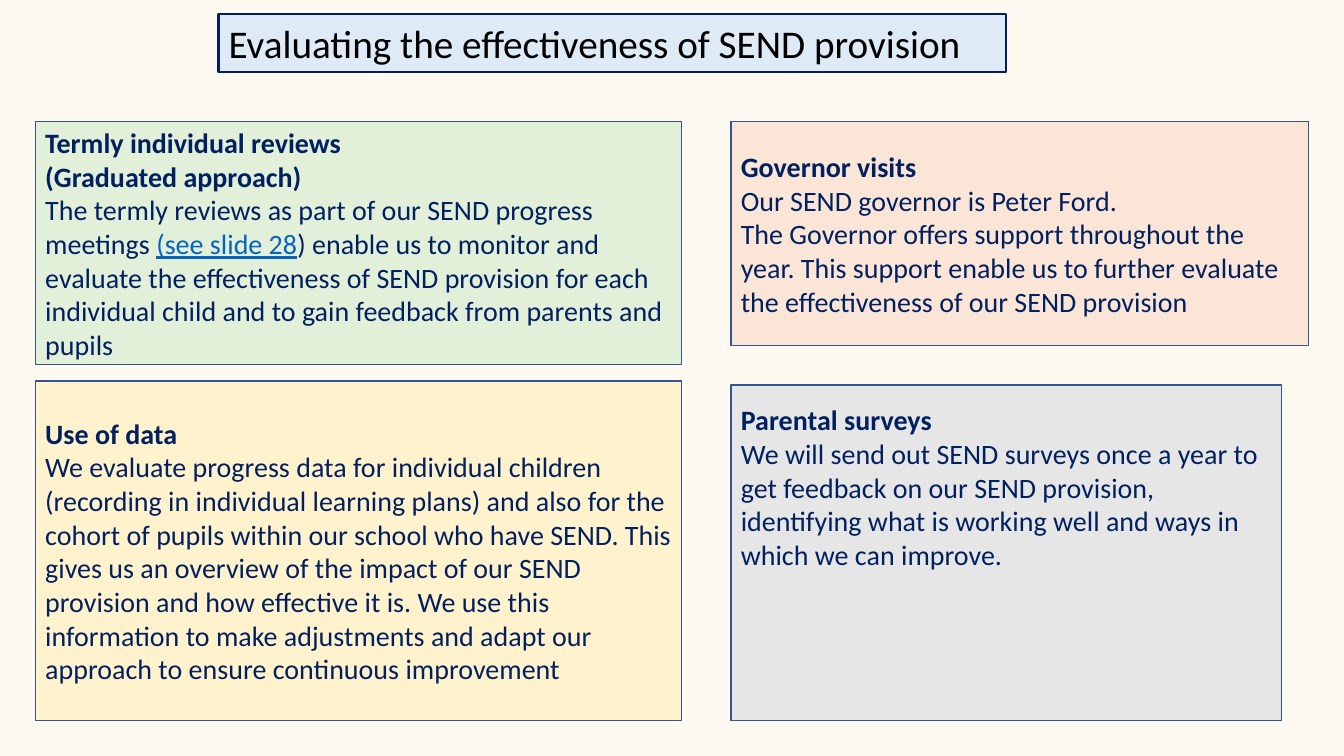
import pptx
import pptx.dml.color
import pptx.enum.shapes
import pptx.enum.text
import pptx.util

Cm = pptx.util.Cm
Pt = pptx.util.Pt
RGB = pptx.dml.color.RGBColor.from_string
ANCHOR = pptx.enum.text.MSO_ANCHOR

THEME = {
    "font": "Calibri", "title_size": 28, "text_size": 20,
    "background": "FFFAF1", "navy": "002060", "black": "000000",
    "link": "0563C1", "outline": "325491",
    "title": "DEEBF7", "green": "E2F0D9", "orange": "FBE5D6",
    "yellow": "FFF2CC", "grey": "E7E6E6",
}


def add_box(bounds, fill, outline, width, anchor):
    shape = slide.shapes.add_shape(
        pptx.enum.shapes.MSO_SHAPE.RECTANGLE, *[Cm(value) for value in bounds])
    shape.shadow.inherit = False
    shape.fill.solid()
    shape.fill.fore_color.rgb = RGB(THEME[fill])
    shape.line.color.rgb = RGB(THEME[outline])
    shape.line.width = Pt(width)
    shape.text_frame.word_wrap = True
    shape.text_frame.vertical_anchor = anchor
    return shape.text_frame


def style(font, size, color, bold=False):
    font.name = THEME["font"]
    font.size = Pt(THEME[size])
    font.color.rgb = RGB(THEME[color])
    font.bold = bold


presentation = pptx.Presentation()
presentation.slide_width, presentation.slide_height = Cm(33.87), Cm(19.05)
slide = presentation.slides.add_slide(presentation.slide_layouts[6])
slide.background.fill.solid()
slide.background.fill.fore_color.rgb = RGB(THEME["background"])

# Title
frame = add_box((5.51, 0.36, 19.84, 1.45), "title", "navy", 1.75, ANCHOR.TOP)
paragraph = frame.paragraphs[0]
paragraph.text = "Evaluating the effectiveness of SEND provision"
paragraph.alignment = pptx.enum.text.PP_ALIGN.LEFT
style(paragraph.font, "title_size", "black")

# Panels: bounds, fill, anchor, heading lines, body paragraphs as lists of runs
LEFT, RIGHT, TOP = 0.89, 18.42, 3.07
LINK = "(see slide 28"
panels = [
    ((LEFT, TOP, 16.28, 6.12), "green", ANCHOR.MIDDLE,
     ["Termly individual reviews", "(Graduated approach)"],
     [["The termly reviews as part of our SEND progress meetings ", LINK,
       ") enable us to monitor and evaluate the effectiveness of SEND provision "
       "for each individual child and to gain feedback from parents and pupils"]]),
    ((RIGHT, TOP, 14.55, 5.64), "orange", ANCHOR.MIDDLE,
     ["Governor visits"],
     [["Our SEND governor is Peter Ford."],
      ["The Governor offers support throughout the year. This support enable us "
       "to further evaluate the effectiveness of our SEND provision"]]),
    ((LEFT, 9.6, 16.28, 8.56), "yellow", ANCHOR.MIDDLE,
     ["Use of data"],
     [["We evaluate progress data for individual children (recording in individual "
       "learning plans) and also for the cohort of pupils within our school who "
       "have SEND. This gives us an overview of the impact of our SEND provision "
       "and how effective it is. We use this information to make adjustments and "
       "adapt our approach to ensure continuous improvement"]]),
    ((RIGHT, 9.7, 13.87, 8.46), "grey", ANCHOR.TOP,
     ["Parental surveys"],
     [["We will send out SEND surveys once a year to get feedback on our SEND "
       "provision, identifying what is working well and ways in which we can "
       "improve."]]),
]

for bounds, fill, anchor, headings, body in panels:
    frame = add_box(bounds, fill, "outline", 1, anchor)
    if anchor == ANCHOR.TOP:
        frame.margin_top = Cm(0.45)
    paragraphs = [[heading] for heading in headings] + body
    for index, texts in enumerate(paragraphs):
        paragraph = frame.add_paragraph() if index else frame.paragraphs[0]
        paragraph.alignment = pptx.enum.text.PP_ALIGN.LEFT
        for text in texts:
            run = paragraph.add_run()
            run.text = text
            if len(texts) > 1:
                style(run.font, "text_size", "link" if text == LINK else "navy")
                run.font.underline = text == LINK
        if len(texts) == 1:
            style(paragraph.font, "text_size", "navy", index < len(headings))

presentation.save("out.pptx")
